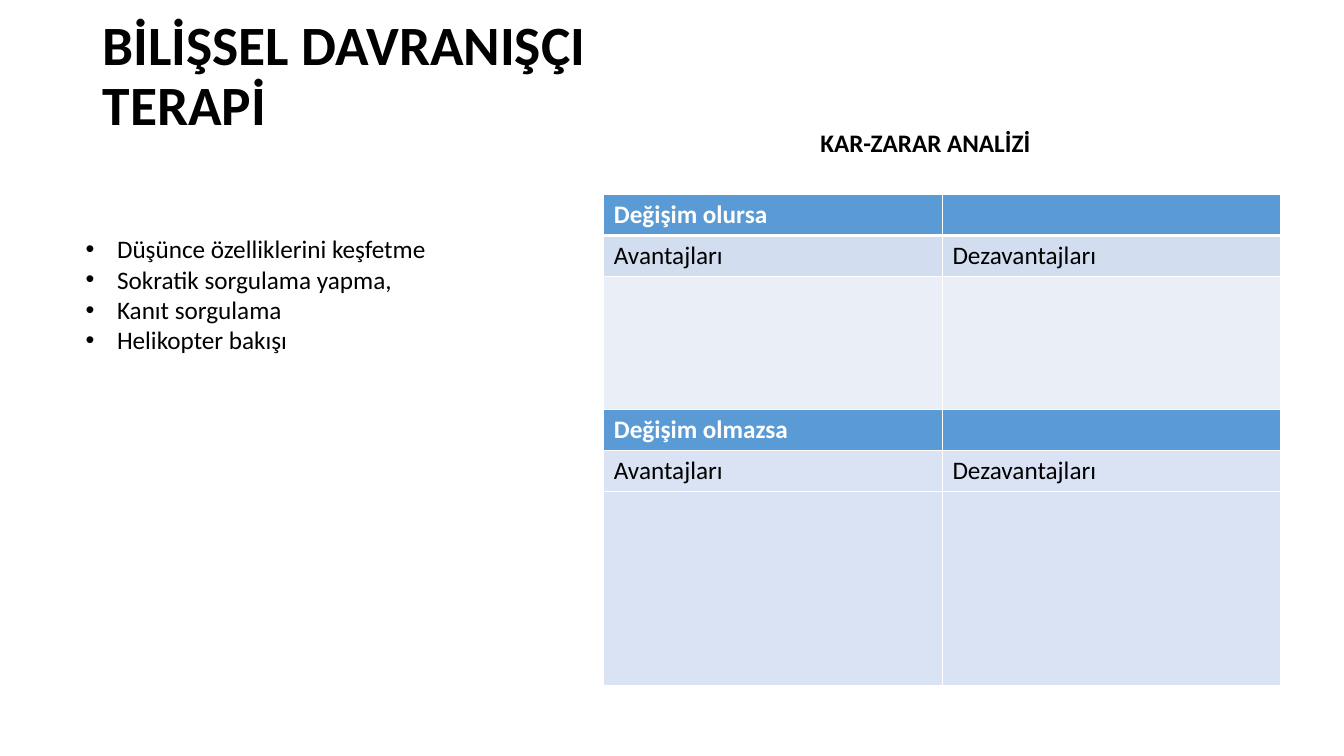
from lxml import etree
from pptx import Presentation
from pptx.dml.color import RGBColor
from pptx.enum.text import MSO_ANCHOR
from pptx.oxml.ns import qn
from pptx.util import Pt

TOP = MSO_ANCHOR.TOP
MIDDLE = MSO_ANCHOR.MIDDLE
FONT = "Calibri"
COLORS = {
    "text": "000000",
    "white": "FFFFFF",
    "header": "5B9BD5",
    "band": "D2DEEF",
    "pale": "EAEFF7",
    "lavender": "DAE3F3",
}
TECHNIQUES = [
    "Düşünce özelliklerini keşfetme",
    "Sokratik sorgulama yapma,",
    "Kanıt sorgulama",
    "Helikopter bakışı",
]
LABELS = ("Avantajları", "Dezavantajları")
ANALYSIS_ROWS = [
    (("Değişim olursa", ""), "header", 29.2),
    (LABELS, "band", 29.2),
    (("", ""), "pale", 95),
    (("Değişim olmazsa", ""), "header", 29.2),
    (LABELS, "lavender", 29.2),
    (("", ""), "lavender", 139),
]


def rgb(name):
    """Return the named colour."""
    return RGBColor.from_string(COLORS[name])


def format_run(run, size=18, color="text", bold=False):
    """Apply font values to a run."""
    values = {"name": FONT, "size": Pt(size), "bold": bold}
    for attribute, value in values.items():
        setattr(run.font, attribute, value)
    run.font.color.rgb = rgb(color)


def add_bullet(paragraph, indent=22.5):
    """Give a paragraph a hanging bullet."""
    properties = paragraph._p.get_or_add_pPr()
    properties.set("marL", str(Pt(indent)))
    properties.set("indent", str(-Pt(indent)))
    etree.SubElement(properties, qn("a:buFont"), typeface="Arial")
    etree.SubElement(properties, qn("a:buChar"), char="•")


def add_text(slide, box, lines, anchor=TOP, spacing=1.0, bullets=False, **font):
    """Add a text box with one paragraph for each line."""
    shape = slide.shapes.add_textbox(*map(Pt, box))
    frame = shape.text_frame
    frame.word_wrap = True
    frame.vertical_anchor = anchor
    for index, line in enumerate(lines):
        paragraph = frame.paragraphs[0] if index == 0 else frame.add_paragraph()
        paragraph.line_spacing = spacing
        if bullets:
            add_bullet(paragraph)
        run = paragraph.add_run()
        run.text = line
        format_run(run, **font)


def set_borders(cell, top=1, bottom=1):
    """Draw white borders around a cell."""
    properties = cell._tc.get_or_add_tcPr()
    widths = {"a:lnL": 1, "a:lnR": 1, "a:lnT": top, "a:lnB": bottom}
    for index, (tag, width) in enumerate(widths.items()):
        line = etree.Element(qn(tag), w=str(Pt(width)))
        fill = etree.SubElement(line, qn("a:solidFill"))
        etree.SubElement(fill, qn("a:srgbClr"), val=COLORS["white"])
        properties.insert(index, line)


def add_analysis_table(slide, left, top, column_width):
    """Add the cost-benefit table."""
    height = sum(row[2] for row in ANALYSIS_ROWS)
    table = slide.shapes.add_table(
        len(ANALYSIS_ROWS), 2, Pt(left), Pt(top), Pt(2 * column_width), Pt(height)
    ).table
    table.first_row = table.horz_banding = False
    for column in table.columns:
        column.width = Pt(column_width)
    for row_index, (texts, fill, row_height) in enumerate(ANALYSIS_ROWS):
        table.rows[row_index].height = Pt(row_height)
        is_header = fill == "header"
        for column_index, text in enumerate(texts):
            cell = table.cell(row_index, column_index)
            cell.fill.solid()
            cell.fill.fore_color.rgb = rgb(fill)
            set_borders(
                cell,
                top=3 if row_index == 1 else 1,
                bottom=3 if row_index == 0 else 1,
            )
            if text:
                run = cell.text_frame.paragraphs[0].add_run()
                run.text = text
                format_run(run, color="white" if is_header else "text", bold=is_header)


def main():
    """Build and save the slide."""
    presentation = Presentation()
    presentation.slide_width = Pt(960)
    presentation.slide_height = Pt(540)
    slide = presentation.slides.add_slide(presentation.slide_layouts[6])
    add_text(slide, (66.24, 28.8, 473, 53.3), ["BİLİŞSEL DAVRANIŞÇI TERAPİ"],
             anchor=MIDDLE, spacing=0.9, size=39.6, bold=True)
    add_analysis_table(slide, 431.3, 139, 241.9)
    add_text(slide, (578.9, 87.1, 204.5, 29), ["KAR-ZARAR ANALİZİ"], bold=True)
    add_text(slide, (54, 163.4, 260.6, 116.6), TECHNIQUES, bullets=True)
    presentation.save("out.pptx")


if __name__ == "__main__":
    main()
